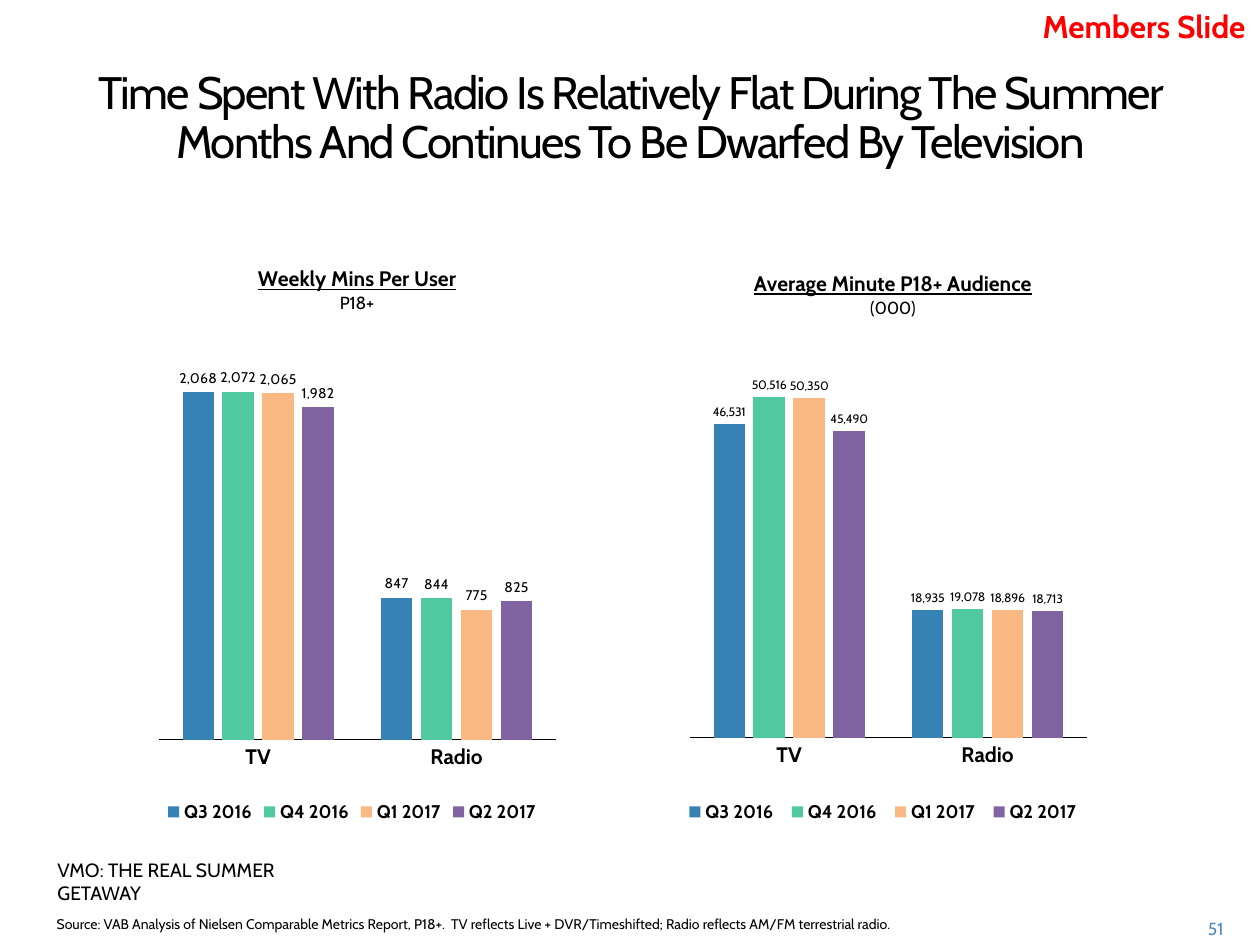
from lxml.etree import SubElement
from pptx import Presentation
from pptx.chart.data import CategoryChartData
from pptx.dml.color import RGBColor
from pptx.enum.chart import XL_CHART_TYPE, XL_LABEL_POSITION, XL_LEGEND_POSITION, XL_TICK_MARK
from pptx.enum.text import MSO_ANCHOR, MSO_AUTO_SIZE, PP_ALIGN
from pptx.oxml import parse_xml
from pptx.oxml.ns import nsdecls, qn
from pptx.util import Emu, Pt

SCALE = 914400 / 126
FONT = "Cabin"
COLORS = {
    "text": "000000",
    "flag": "FF0000",
    "page": "508ABA",
    "Q3 2016": "3682B4",
    "Q4 2016": "50C8A0",
    "Q1 2017": "FAB982",
    "Q2 2017": "8064A2",
}
QUARTERS = ["Q3 2016", "Q4 2016", "Q1 2017", "Q2 2017"]


def px(n):
    return Emu(round(n * SCALE))


def rgb(name):
    return RGBColor.from_string(COLORS[name])


def set_font(font, size, color="text", bold=False, underline=None):
    font.name = FONT
    font.size = Pt(size)
    font.bold = bold
    font.color.rgb = rgb(color)
    if underline is not None:
        font.underline = underline


def write(p, text, align=PP_ALIGN.LEFT, line=None, spacing=None, **style):
    p.alignment = align
    p.space_before = Pt(0)
    if line:
        p.line_spacing = Pt(line)
    r = p.add_run()
    r.text = text
    set_font(r.font, **style)
    if spacing:
        r.font._element.set("spc", str(spacing))


def set_layout(element, chart_px, box_px):
    left, top, width, height = chart_px
    x, y, w, h = box_px
    parts = [("x", (x - left) / width), ("y", (y - top) / height)]
    if w:
        parts += [("w", w / width), ("h", h / height)]
    old = element.find(qn("c:layout"))
    if old is not None:
        element.remove(old)
    layout = parse_xml(f"<c:layout {nsdecls('c')}/>")
    manual = SubElement(layout, qn("c:manualLayout"))
    if element.tag == qn("c:plotArea"):
        SubElement(manual, qn("c:layoutTarget")).set("val", "inner")
    for key in ("xMode", "yMode"):
        SubElement(manual, qn(f"c:{key}")).set("val", "edge")
    for key, value in parts:
        SubElement(manual, qn(f"c:{key}")).set("val", f"{value:.4f}")
    before = {"plotArea": None, "title": "c:tx", "legend": "c:legendPos"}
    anchor = before[element.tag.split("}")[1]]
    if anchor:
        element.find(qn(anchor)).addnext(layout)
    else:
        element.insert(0, layout)


class SlideBuilder:
    def __init__(self, prs):
        self.s = prs.slides.add_slide(prs.slide_layouts[1])

    def fill_frame(self, sp, box, text, anchor, **style):
        sp.left, sp.top, sp.width, sp.height = map(px, box)
        tf = sp.text_frame
        tf.word_wrap = True
        tf.auto_size = MSO_AUTO_SIZE.NONE
        tf.vertical_anchor = anchor
        write(tf.paragraphs[0], text, **style)

    def title(self, box, text, **style):
        self.fill_frame(self.s.shapes.title, box, text, MSO_ANCHOR.TOP, **style)

    def body(self, box, text, **style):
        sp = self.s.placeholders[1]
        pPr = sp.text_frame.paragraphs[0]._p.get_or_add_pPr()
        pPr.set("marL", "0")
        pPr.set("indent", "0")
        SubElement(pPr, qn("a:buNone"))
        self.fill_frame(sp, box, text, MSO_ANCHOR.MIDDLE, **style)

    def text(self, box, text, anchor=MSO_ANCHOR.TOP, **style):
        sp = self.s.shapes.add_textbox(*map(px, box))
        self.fill_frame(sp, box, text, anchor, **style)

    def chart(self, box, heading, unit, values, top, label_size, title_box, plot_box, legend_box):
        data = CategoryChartData(number_format="#,##0")
        data.categories = ["TV", "Radio"]
        for quarter, pair in zip(QUARTERS, values):
            data.add_series(quarter, pair)
        chart = self.s.shapes.add_chart(
            XL_CHART_TYPE.COLUMN_CLUSTERED, *map(px, box), data).chart
        set_font(chart.font, 10)

        tf = chart.chart_title.text_frame
        write(tf.paragraphs[0], heading, align=PP_ALIGN.CENTER, size=12, bold=True, underline=True)
        write(tf.add_paragraph(), unit, align=PP_ALIGN.CENTER, size=10, underline=False)
        chart.chart_title.include_in_layout = False

        chart.has_legend = True
        chart.legend.position = XL_LEGEND_POSITION.BOTTOM
        chart.legend.include_in_layout = False
        set_font(chart.legend.font, 10.5, bold=True)

        axis = chart.category_axis
        axis.major_tick_mark = axis.minor_tick_mark = XL_TICK_MARK.NONE
        set_font(axis.tick_labels.font, 12, bold=True)
        axis.format.line.color.rgb = rgb("text")
        axis.format.line.width = Pt(0.75)
        axis = chart.value_axis
        axis.minimum_scale = 0
        axis.maximum_scale = top
        axis.has_major_gridlines = False
        axis.visible = False

        plot = chart.plots[0]
        plot.gap_width = 150
        plot.overlap = -27
        plot.vary_by_categories = False
        for series in plot.series:
            series.format.fill.solid()
            series.format.fill.fore_color.rgb = rgb(series.name)
            series.invert_if_negative = False
            labels = series.data_labels
            labels.show_value = True
            labels.number_format = "#,##0"
            labels.number_format_is_linked = False
            labels.position = XL_LABEL_POSITION.OUTSIDE_END
            set_font(labels.font, label_size)

        set_layout(chart.chart_title._element, box, title_box)
        set_layout(chart._chartSpace.chart.plotArea, box, plot_box)
        set_layout(chart.legend._element, box, legend_box)


def main():
    prs = Presentation()
    prs.slide_width, prs.slide_height = px(1260), px(945)
    slide = SlideBuilder(prs)
    slide.title(
        (24, 63, 1213, 86),
        "Time Spent With Radio Is Relatively Flat During The Summer "
        "Months And Continues To Be Dwarfed By Television",
        align=PP_ALIGN.CENTER, line=28, spacing=-100, size=26)
    slide.body(
        (44, 907, 949, 33),
        "Source: VAB Analysis of Nielsen Comparable Metrics Report, P18+.  "
        "TV reflects Live + DVR/Timeshifted; Radio reflects AM/FM terrestrial radio.",
        size=8)
    slide.chart(
        (140, 241, 436, 593), "Weekly Mins Per User", "P18+",
        [(2068, 847), (2072, 844), (2065, 775), (1982, 825)], 2500, 8,
        (254, 261, 0, 0), (159, 320, 397, 420), (162, 799, 380, 26))
    slide.chart(
        (670, 241, 437, 593), "Average Minute P18+ Audience", "(000)",
        [(46531, 18935), (50516, 19078), (50350, 18896), (45490, 18713)], 60000, 7,
        (750, 266, 0, 0), (690, 333, 397, 405), (677, 802, 412, 26))
    slide.text((1017, 1, 241, 50), "Members Slide",
               align=PP_ALIGN.RIGHT, size=18, color="flag", bold=True)
    slide.text((45, 852, 329, 59), "VMO: THE REAL SUMMER GETAWAY", size=11)
    slide.text((1159, 912, 77, 32), "51", anchor=MSO_ANCHOR.MIDDLE,
               align=PP_ALIGN.RIGHT, size=10, color="page")
    prs.save("out.pptx")


if __name__ == "__main__":
    main()
